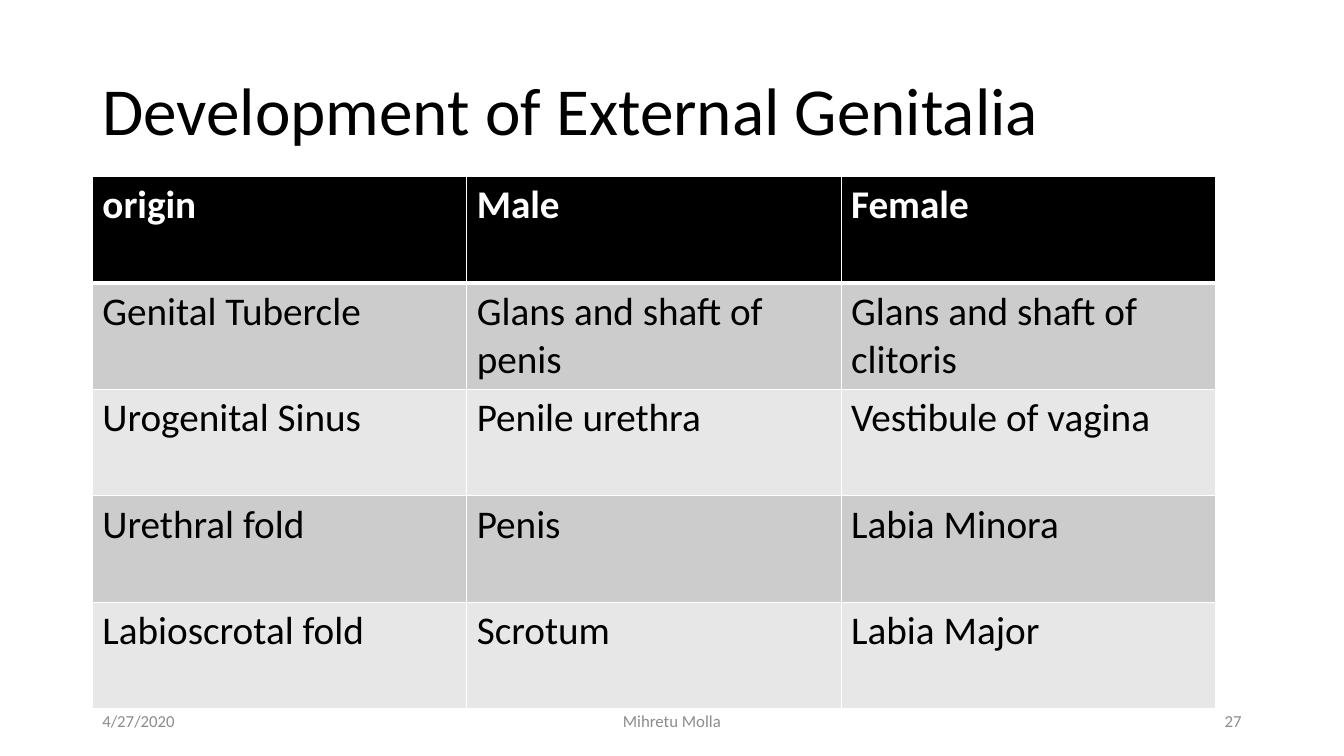
from dataclasses import dataclass

from lxml import etree
from pptx import Presentation
from pptx.dml.color import RGBColor
from pptx.enum.text import MSO_ANCHOR, PP_ALIGN
from pptx.oxml.ns import qn
from pptx.slide import Slide
from pptx.table import _Cell
from pptx.text.text import _Paragraph
from pptx.util import Inches, Pt

FONT = "Calibri"
COLORS = {
    "black": "000000",
    "white": "FFFFFF",
    "dark band": "CCCCCC",
    "light band": "E7E7E7",
    "footer": "8C8C8C",
}

# The page is a grid of 160 columns by 150 rows
WIDTH, HEIGHT = Inches(13.333), Inches(7.5)
COLUMN, ROW = WIDTH / 160, HEIGHT / 150


@dataclass(frozen=True)
class Area:
    left: float
    top: float
    width: float
    height: float

    def lengths(self) -> tuple[int, int, int, int]:
        return (round(self.left * COLUMN), round(self.top * ROW),
                round(self.width * COLUMN), round(self.height * ROW))


@dataclass(frozen=True)
class Label:
    text: str
    area: Area
    size: int
    color: str
    align: PP_ALIGN = PP_ALIGN.LEFT
    line_spacing: float = 1.0


LABELS = [
    Label("Development of External Genitalia", Area(11, 8, 138, 29), 48, "black",
          line_spacing=0.9),
    Label("4/27/2020", Area(11, 139, 36, 8), 12, "footer"),
    Label("Mihretu Molla", Area(53, 139, 54, 8), 12, "footer", PP_ALIGN.CENTER),
    Label("27", Area(113, 139, 36, 8), 12, "footer", PP_ALIGN.RIGHT),
]

TABLE_AREA = Area(11, 35, 133.7, 105.6)
TABLE_ROWS = [
    ("origin", "Male", "Female"),
    ("Genital Tubercle", "Glans and shaft of penis", "Glans and shaft of clitoris"),
    ("Urogenital Sinus", "Penile urethra", "Vestibule of vagina"),
    ("Urethral fold", "Penis", "Labia Minora"),
    ("Labioscrotal fold", "Scrotum", "Labia Major"),
]


def rgb(name: str) -> RGBColor:
    return RGBColor.from_string(COLORS[name])


def write(para: _Paragraph, text: str, size: int, color: str, bold: bool = False) -> None:
    para.text = text
    para.font.name = FONT
    para.font.size = Pt(size)
    para.font.bold = bold
    para.font.color.rgb = rgb(color)


def add_label(page: Slide, label: Label) -> None:
    box = page.shapes.add_textbox(*label.area.lengths())
    frame = box.text_frame
    frame.word_wrap = True
    frame.vertical_anchor = MSO_ANCHOR.MIDDLE
    para = frame.paragraphs[0]
    para.alignment = label.align
    para.line_spacing = label.line_spacing
    write(para, label.text, label.size, label.color)


def add_borders(cell: _Cell, top: int, bottom: int) -> None:
    properties = cell._tc.get_or_add_tcPr()
    for side, points in (("L", 1), ("R", 1), ("T", top), ("B", bottom)):
        line = etree.SubElement(properties, qn(f"a:ln{side}"), w=str(Pt(points)))
        fill = etree.SubElement(line, qn("a:solidFill"))
        etree.SubElement(fill, qn("a:srgbClr"), val=COLORS["white"])


def add_origin_table(page: Slide) -> None:
    row_count, column_count = len(TABLE_ROWS), len(TABLE_ROWS[0])
    table = page.shapes.add_table(row_count, column_count, *TABLE_AREA.lengths()).table
    for row_index, texts in enumerate(TABLE_ROWS):
        header = row_index == 0
        band = "black" if header else ("light band", "dark band")[row_index % 2]
        for column_index, text in enumerate(texts):
            cell = table.cell(row_index, column_index)
            # A thick rule parts the header from the body
            add_borders(cell, top=3 if row_index == 1 else 1, bottom=3 if header else 1)
            cell.fill.solid()
            cell.fill.fore_color.rgb = rgb(band)
            write(cell.text_frame.paragraphs[0], text, 28,
                  "white" if header else "black", bold=header)


def main() -> None:
    deck = Presentation()
    deck.slide_width, deck.slide_height = WIDTH, HEIGHT
    page = deck.slides.add_slide(deck.slide_layouts[6])

    # Table of origins, then title and footer
    add_origin_table(page)
    for label in LABELS:
        add_label(page, label)

    deck.save("out.pptx")


if __name__ == "__main__":
    main()
